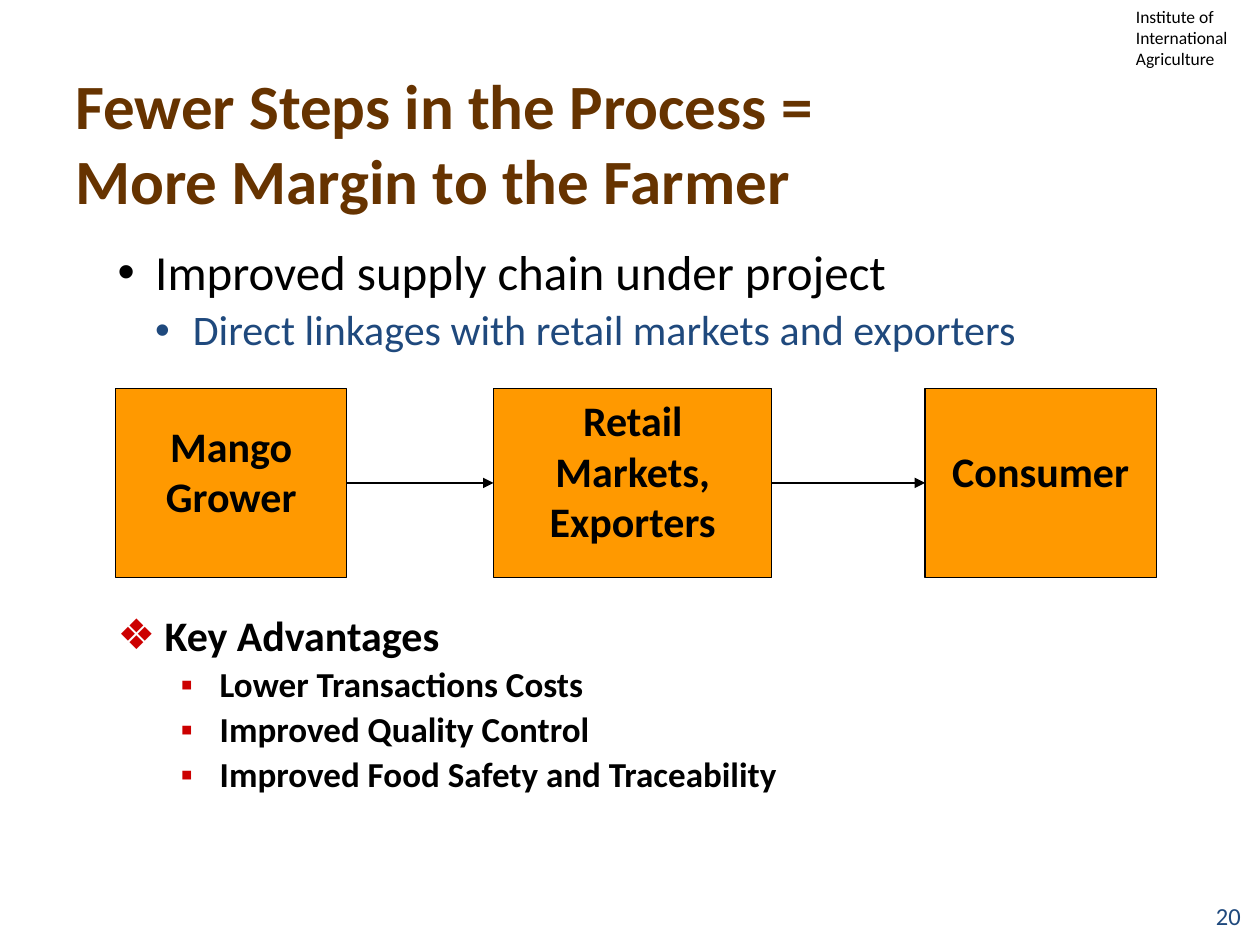
from itertools import pairwise

from lxml.etree import SubElement
from pptx import Presentation
from pptx.dml.color import RGBColor
from pptx.enum.shapes import MSO_CONNECTOR, MSO_SHAPE
from pptx.enum.text import MSO_ANCHOR, PP_ALIGN
from pptx.oxml.ns import qn
from pptx.util import Cm, Pt

BLACK, BLUE, BROWN, ORANGE, RED = "000000", "1F497D", "663300", "FF9900", "CC0000"


def color(value):
    return RGBColor.from_string(value)


class SlideBuilder:
    font = "Calibri"
    line_width = Pt(0.75)

    def __init__(self, slide):
        self.slide = slide

    def style(self, paragraph, size, ink=BLACK, bold=False, align=PP_ALIGN.LEFT):
        paragraph.alignment = align
        for run in paragraph.runs:
            run.font.name = self.font
            run.font.size = Pt(size)
            run.font.bold = bold
            run.font.color.rgb = color(ink)

    def frame(self, left, top, width, height):
        box = self.slide.shapes.add_textbox(Cm(left), Cm(top), Cm(width), Cm(height))
        box.text_frame.word_wrap = True
        return box.text_frame

    def text(self, area, content, size, anchor=MSO_ANCHOR.TOP, **look):
        frame = self.frame(*area)
        frame.vertical_anchor = anchor
        frame.text = content
        for paragraph in frame.paragraphs:
            self.style(paragraph, size, **look)

    def bullets(self, area, items, levels, bold=False):
        frame = self.frame(*area)
        frame.text = "\n".join(content for content, _ in items)
        for index, (paragraph, (_, level)) in enumerate(zip(frame.paragraphs, items)):
            mark, mark_color, margin, hanging, size, ink, gap = levels[level]
            paragraph.level = level
            paragraph.line_spacing = 0.9
            paragraph.space_before = Pt(gap if index else 0)
            properties = paragraph._p.get_or_add_pPr()
            properties.set("marL", str(Cm(margin)))
            properties.set("indent", str(-Cm(hanging)))
            bullet_color = SubElement(properties, qn("a:buClr"))
            SubElement(bullet_color, qn("a:srgbClr"), val=mark_color)
            SubElement(properties, qn("a:buFont"), typeface="Arial")
            SubElement(properties, qn("a:buChar"), char=mark)
            self.style(paragraph, size, ink, bold)

    def stage(self, left, top, width, height, label, inset):
        box = self.slide.shapes.add_shape(
            MSO_SHAPE.RECTANGLE, Cm(left), Cm(top), Cm(width), Cm(height))
        box.shadow.inherit = False
        box.fill.solid()
        box.fill.fore_color.rgb = color(ORANGE)
        box.line.color.rgb = color(BLACK)
        box.line.width = self.line_width
        frame = box.text_frame
        frame.word_wrap = True
        frame.vertical_anchor = MSO_ANCHOR.TOP
        frame.margin_top = Cm(inset)
        frame.text = label
        self.style(frame.paragraphs[0], 24, bold=True, align=PP_ALIGN.CENTER)
        return box

    def arrow(self, source, target):
        link = self.slide.shapes.add_connector(MSO_CONNECTOR.STRAIGHT, 0, 0, 0, 0)
        link.begin_connect(source, 3)
        link.end_connect(target, 1)
        link.line.color.rgb = color(BLACK)
        link.line.width = self.line_width
        SubElement(link.line._get_or_add_ln(), qn("a:tailEnd"), type="triangle")
        SubElement(link._element.spPr, qn("a:effectLst"))


def main():
    deck = Presentation()
    deck.slide_width, deck.slide_height = Cm(25.4), Cm(19.05)
    builder = SlideBuilder(deck.slides.add_slide(deck.slide_layouts[6]))

    builder.text((22.65, 0, 2.75, 1.32), "Institute of\nInternational\nAgriculture", 10)
    builder.text((1.27, 1.27, 22.86, 3.18),
                 "Fewer Steps in the Process =\vMore Margin to the Farmer", 36,
                 anchor=MSO_ANCHOR.MIDDLE, ink=BROWN, bold=True)

    builder.bullets(
        (2.12, 4.87, 21.38, 4.02),
        [("Improved supply chain under project", 0),
         ("Direct linkages with retail markets and exporters", 1)],
        [("•", BLACK, 0.76, 0.76, 28, BLACK, 6),
         ("•", BLUE, 1.52, 0.76, 24, BLUE, 5)])

    supply_chain = [
        (2.33, 4.66, "Mango Grower", 0.64),
        (9.95, 5.61, "Retail Markets, Exporters", 0.13),
        (18.65, 4.66, "Consumer", 1.16),
    ]
    stages = [builder.stage(left, 7.83, width, 3.81, label, inset)
              for left, width, label, inset in supply_chain]
    for source, target in pairwise(stages):
        builder.arrow(source, target)

    builder.bullets(
        (2.12, 12.28, 21.38, 4.02),
        [("Key Advantages", 0),
         ("Lower Transactions Costs", 1),
         ("Improved Quality Control", 1),
         ("Improved Food Safety and Traceability", 1)],
        [("❖", RED, 0.95, 0.95, 24, BLACK, 5),
         ("▪", RED, 2.06, 0.79, 20, BLACK, 4)],
        bold=True)

    builder.text((24.13, 18.03, 1.27, 1.02), "20", 14, ink=BLUE, align=PP_ALIGN.CENTER)
    deck.save("out.pptx")


if __name__ == "__main__":
    main()
